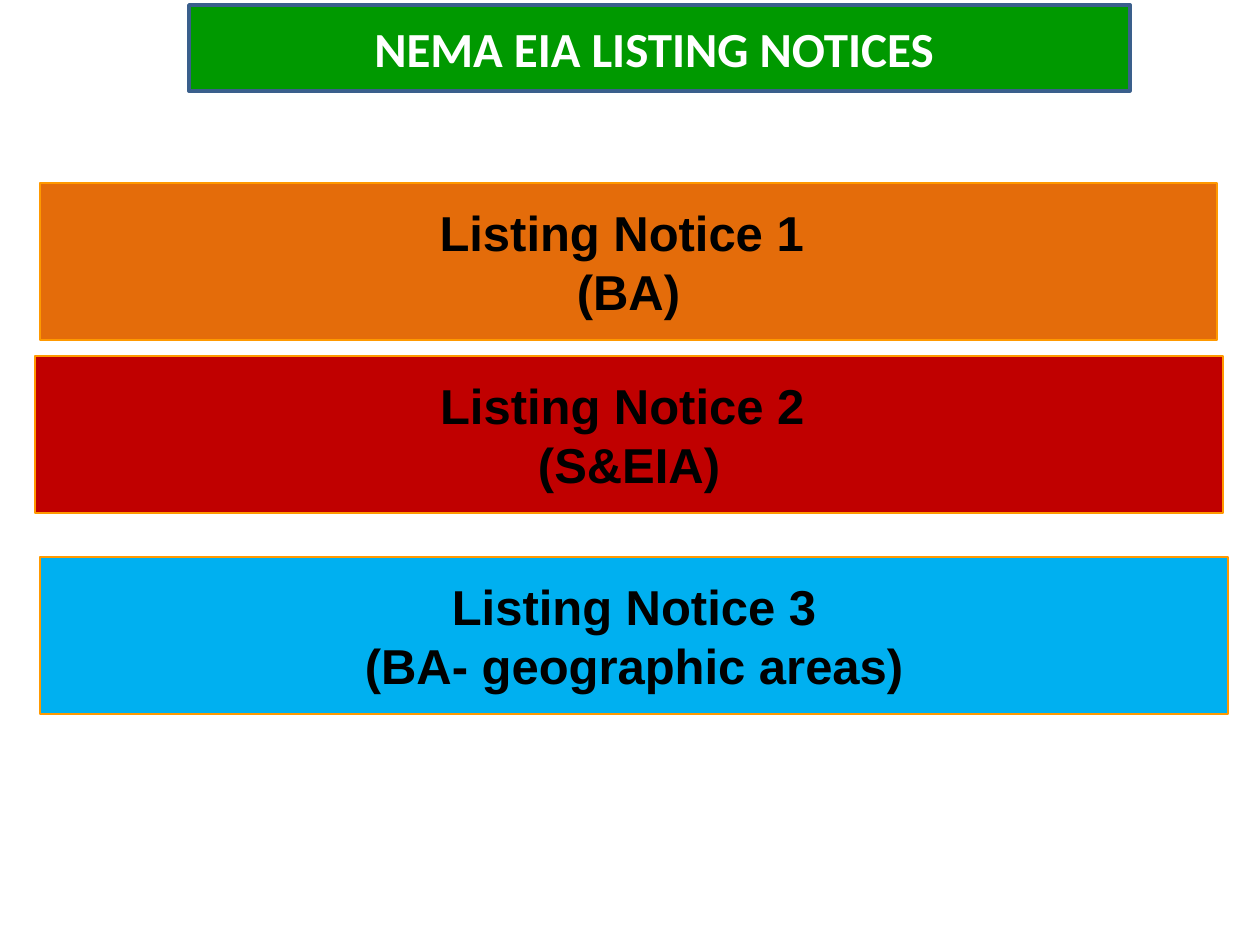
from dataclasses import dataclass

from pptx import Presentation
from pptx.dml.color import RGBColor
from pptx.enum.shapes import MSO_SHAPE
from pptx.enum.text import MSO_ANCHOR, PP_ALIGN
from pptx.util import Inches, Pt

PX_PER_INCH = 126


def px(n):
    return Inches(n / PX_PER_INCH)


@dataclass(frozen=True)
class Theme:
    title_fill: str = "009900"
    title_line: str = "3A5F8C"
    title_text: str = "FFFFFF"
    notice_fills: tuple = ("E46C0A", "C00000", "00B0F0")
    notice_line: str = "FF9900"
    notice_text: str = "000000"
    title_font: str = "Calibri"
    notice_font: str = "Arial"
    text_size: int = 28
    title_line_width: float = 2
    notice_line_width: float = 0.75


class SlideBuilder:
    """Draws the title banner and notice bars on one slide in one theme."""

    def __init__(self, slide, theme):
        self.s = slide
        self.theme = theme

    def box(self, bounds, lines, fill, line, line_width, font, color):
        sp = self.s.shapes.add_shape(MSO_SHAPE.RECTANGLE, *map(px, bounds))
        sp.shadow.inherit = False
        sp.fill.solid()
        sp.fill.fore_color.rgb = RGBColor.from_string(fill)
        sp.line.color.rgb = RGBColor.from_string(line)
        sp.line.width = Pt(line_width)
        tf = sp.text_frame
        tf.word_wrap = True
        tf.vertical_anchor = MSO_ANCHOR.MIDDLE
        p = tf.paragraphs[0]
        p.alignment = PP_ALIGN.CENTER
        for i, text in enumerate(lines):
            if i:
                p.add_line_break()
            r = p.add_run()
            r.text = text
            r.font.name = font
            r.font.size = Pt(self.theme.text_size)
            r.font.bold = True
            r.font.color.rgb = RGBColor.from_string(color)

    def title(self, bounds, text):
        t = self.theme
        self.box(bounds, [text], t.title_fill, t.title_line,
                 t.title_line_width, t.title_font, t.title_text)

    def notice(self, bounds, lines, fill):
        t = self.theme
        self.box(bounds, lines, fill, t.notice_line,
                 t.notice_line_width, t.notice_font, t.notice_text)


def main():
    prs = Presentation()
    prs.slide_width, prs.slide_height = Inches(10), Inches(7.5)
    theme = Theme()
    slide = SlideBuilder(prs.slides.add_slide(prs.slide_layouts[6]), theme)

    slide.title((189, 5, 941, 86), "NEMA EIA LISTING NOTICES ")
    notice_height = 157
    notices = [
        (40, 183, 1177, ["Listing Notice 1 ", "(BA)"]),
        (35, 356, 1188, ["Listing Notice 2 ", "(S&EIA)"]),
        (40, 557, 1188, ["Listing Notice 3", "(BA- geographic areas)"]),
    ]
    for (left, top, width, lines), fill in zip(notices, theme.notice_fills):
        slide.notice((left, top, width, notice_height), lines, fill)

    prs.save("out.pptx")


if __name__ == "__main__":
    main()
